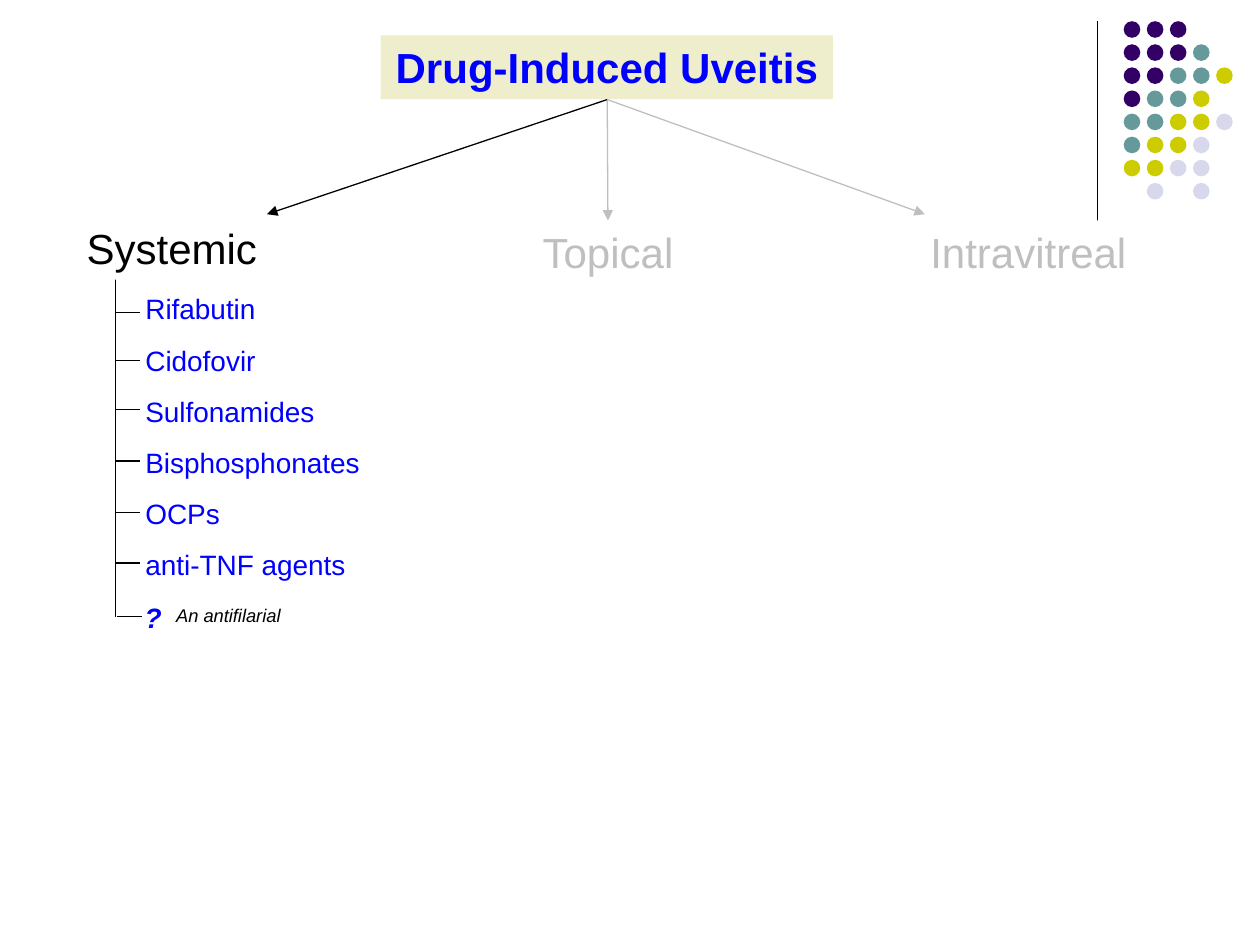
"""Build the drug-induced uveitis slide: three routes and the systemic drug list."""
from pptx import Presentation
from pptx import util as u
from pptx.dml import color
from pptx.enum import shapes, text
from pptx.oxml import ns, xmlchemy

COLORS = {
    "black": "000000", "white": "FFFFFF", "blue": "0000FF", "muted": "BFBFBF",
    "cream": "EEEECC", "purple": "330066", "teal": "669999",
    "olive": "CCCC00", "lilac": "D8D8EC",
}
DOT_COLORS = {"P": "purple", "T": "teal", "O": "olive", "L": "lilac"}
DOT_ROWS = ["PPP", "PPPT", "PPTTO", "PTTO", "TTOOL", "TOOL", "OOLL", " L L"]
DRUGS = [
    ("Rifabutin", 78.5, 178.6),
    ("Cidofovir", 78.5, 205.9),
    ("Sulfonamides", 112.3, 234),
    ("Bisphosphonates", 138.2, 263.5),
    ("OCPs", 57.6, 293),
    ("anti-TNF agents", 130.3, 321.8),
]
TRUNK_X, TICK_END = 66.2, 80.3
TRUNK_SPANS = [(148.3, 264.2), (207.4, 324), (236.9, 352.8)]
HUB = (347, 56.9)
ROUTES = [
    ("Topical", "muted", (302.4, 126, 90, 36), text.PP_ALIGN.CENTER, (347.4, 126)),
    ("Systemic", "black", (41, 123.8, 113, 36), text.PP_ALIGN.RIGHT, (152.6, 122.4)),
    ("Intravitreal", "muted", (523.4, 126, 127.4, 36), text.PP_ALIGN.RIGHT, (528.5, 122.4)),
]


def rgb(name):
    """Return the named colour."""
    return color.RGBColor.from_string(COLORS[name])


def add_line(slide, start, end, shade="black", arrow=False):
    """Draw a thin line, with an arrowhead at its end if asked."""
    line = slide.shapes.add_connector(
        shapes.MSO_CONNECTOR.STRAIGHT, *(u.Pt(value) for value in (*start, *end)))
    line.line.color.rgb = rgb(shade)
    line.line.width = u.Pt(0.75)
    properties = line._element.spPr
    if arrow:
        head = xmlchemy.OxmlElement("a:tailEnd")
        head.set("type", "triangle")
        properties.find(ns.qn("a:ln")).append(head)
    properties.append(xmlchemy.OxmlElement("a:effectLst"))


def add_filled(slide, kind, area, fill):
    """Add a borderless filled shape."""
    shape = slide.shapes.add_shape(kind, *(u.Pt(value) for value in area))
    shape.shadow.inherit = False
    shape.fill.solid()
    shape.fill.fore_color.rgb = rgb(fill)
    shape.line.fill.background()
    return shape


def write(shape, wording, size, shade, align=text.PP_ALIGN.LEFT,
          bold=False, italic=False, wrap=False):
    """Put one styled run into a shape."""
    frame = shape.text_frame
    frame.word_wrap = wrap
    frame.auto_size = text.MSO_AUTO_SIZE.NONE if wrap else text.MSO_AUTO_SIZE.SHAPE_TO_FIT_TEXT
    frame.vertical_anchor = text.MSO_ANCHOR.MIDDLE if wrap else text.MSO_ANCHOR.TOP
    paragraph = frame.paragraphs[0]
    paragraph.alignment = align
    run = paragraph.add_run()
    run.text = wording
    run.font.name = "Arial"
    run.font.size = u.Pt(size)
    run.font.bold = bold
    run.font.italic = italic
    run.font.color.rgb = rgb(shade)


def add_heading(slide, wording, area, fill, shade, align, bold=False):
    """Add a large label on a filled rectangle."""
    heading = add_filled(slide, shapes.MSO_SHAPE.RECTANGLE, area, fill)
    write(heading, wording, 24, shade, align, bold=bold)


def add_label(slide, wording, area, size, shade, **style):
    """Add a small label in a text box."""
    label = slide.shapes.add_textbox(*(u.Pt(value) for value in area))
    write(label, wording, size, shade, **style)


def add_ornament(slide):
    """Draw the corner rule and its grid of dots."""
    add_line(slide, (627.1, 12.2), (627.1, 131.8))
    for row, dots in enumerate(DOT_ROWS):
        for column, dot in enumerate(dots):
            if dot in DOT_COLORS:
                area = (642.1 + 13.2 * column, 12.1 + 13.2 * row, 9.5, 9.5)
                add_filled(slide, shapes.MSO_SHAPE.OVAL, area, DOT_COLORS[dot])


def add_routes(slide):
    """Draw the title, the arrows from it and the three routes."""
    add_heading(slide, "Drug-Induced Uveitis", (217.6, 20.3, 258.4, 36.4),
                "cream", "blue", text.PP_ALIGN.CENTER, bold=True)
    for _, shade, _, _, tip in ROUTES:
        add_line(slide, HUB, tip, shade, arrow=True)
    for wording, shade, area, align, _ in ROUTES:
        add_heading(slide, wording, area, "white", shade, align)


def add_drugs(slide):
    """Draw the ticks and names of the systemic drugs."""
    for row, (drug, width, tick) in enumerate(DRUGS):
        add_line(slide, (TICK_END, tick), (TRUNK_X, tick))
        add_label(slide, drug, (76, 163.3 + 29.2 * row, width, 26.6), 16, "blue")
    add_line(slide, (81, 352.1), (67, 352.1))
    add_label(slide, "?", (75.6, 339.8, 24.5, 26.6), 16, "blue", bold=True, italic=True)
    add_label(slide, "An antifilarial", (93.6, 338.4, 82.8, 25.9), 10.5, "black",
              italic=True, wrap=True)


def main():
    """Build and save the slide."""
    deck = Presentation()
    deck.slide_width, deck.slide_height = u.Pt(720), u.Pt(540)
    slide = deck.slides.add_slide(deck.slide_layouts[6])
    add_ornament(slide)
    for top, bottom in TRUNK_SPANS:
        add_line(slide, (TRUNK_X, top), (TRUNK_X, bottom))
    add_routes(slide)
    add_drugs(slide)
    deck.save("out.pptx")


if __name__ == "__main__":
    main()
